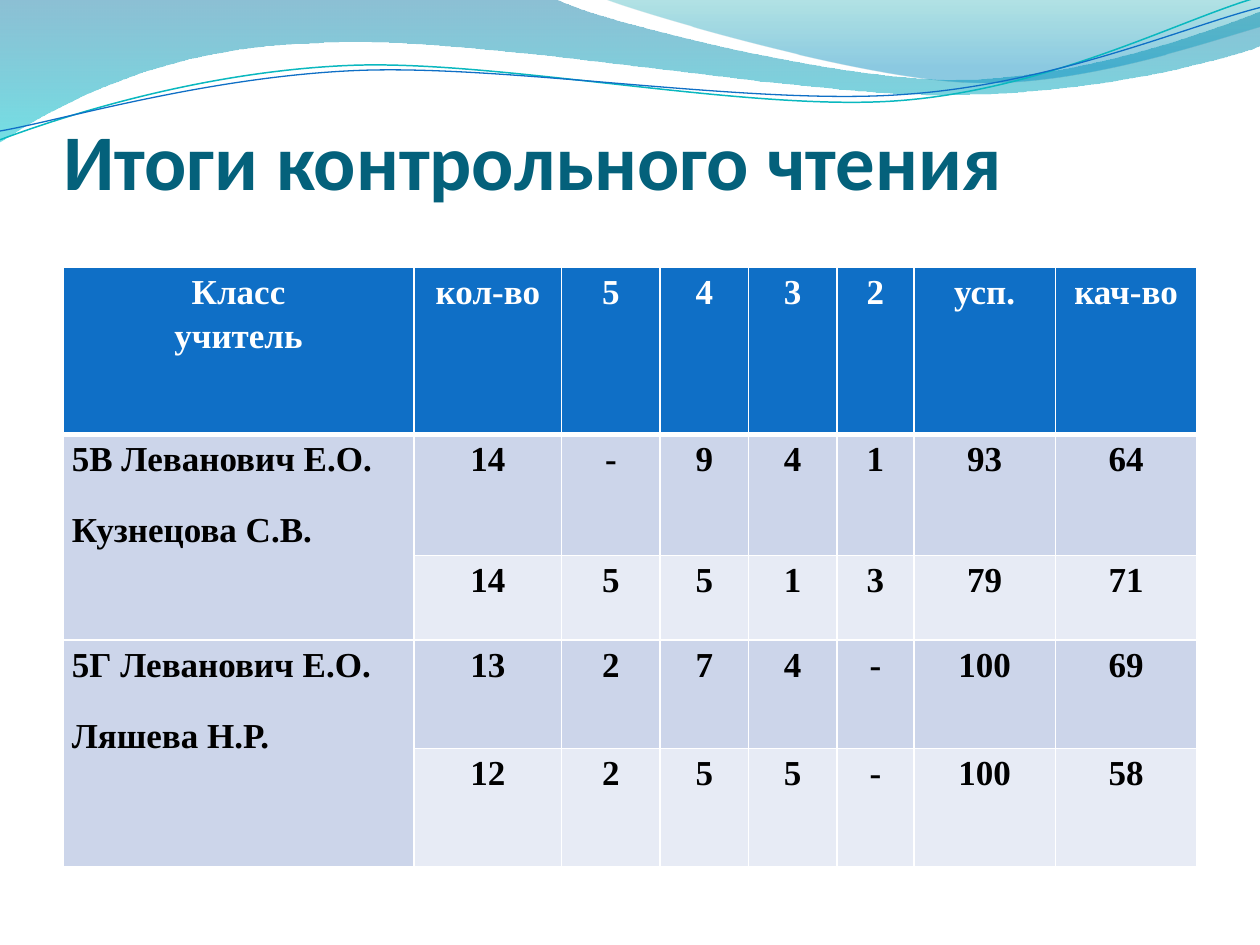
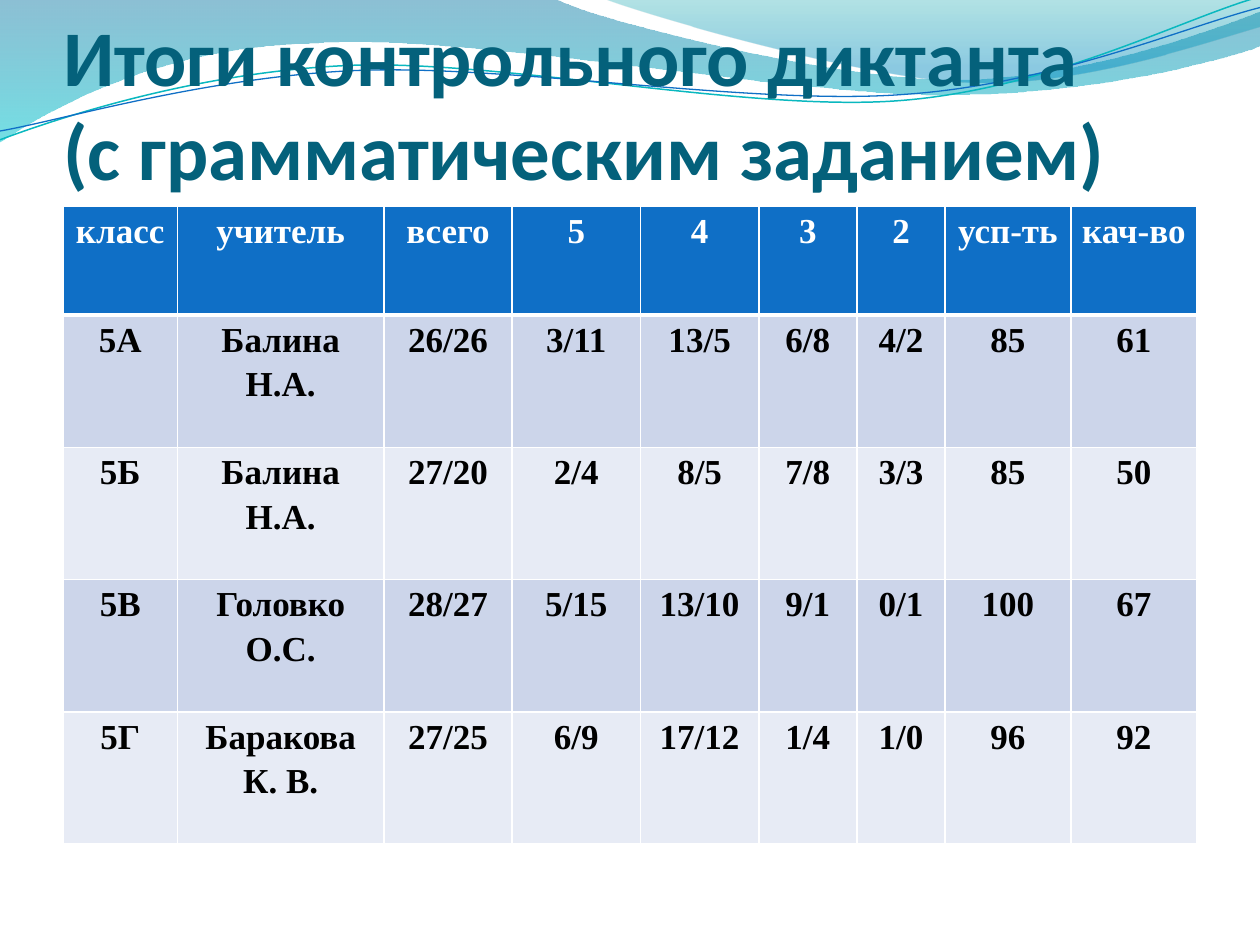
import pptx
import pptx.dml.color
import pptx.enum.text
import pptx.oxml.ns
import pptx.util
from lxml import etree

Inches = pptx.util.Inches
Pt = pptx.util.Pt
RGBColor = pptx.dml.color.RGBColor
Align = pptx.enum.text.PP_ALIGN
qn = pptx.oxml.ns.qn

WHITE = RGBColor(0xFF, 0xFF, 0xFF)
BLACK = RGBColor(0x00, 0x00, 0x00)
TITLE_TEAL = RGBColor(0x04, 0x61, 0x7B)
HEADER_BLUE = RGBColor(0x0F, 0x6F, 0xC6)
ROW_DARK = RGBColor(0xCC, 0xD5, 0xEA)
ROW_LIGHT = RGBColor(0xE7, 0xEB, 0xF5)
LINE_TEAL = RGBColor(0x0A, 0xB8, 0xBF)

CONTENT_LEFT = 0.5
CONTENT_WIDTH = 9

# Gradient stops: position, colour, opacity in percent
WIDE_STOPS = [(0, RGBColor(0x00, 0x74, 0xA1), 45), (1, RGBColor(0x00, 0xC6, 0xCF), 55)]
RIGHT_STOPS = [(0, RGBColor(0x00, 0xA1, 0xA9), 30), (0.8, RGBColor(0x00, 0x8B, 0xBF), 45)]

# Outlines: a pair is a straight step, six numbers are a Bezier step
WIDE_WAVE = [
    (0, 0), (4.4, -0.01), (4.76, 0.17, 6.64, 0.63, 7.58, 0.63),
    (8.53, 0.63, 9.58, 0.26, 10, 0.09), (10.01, 0.36),
    (9.83, 0.44, 8.7, 0.76, 7.46, 0.75), (6.22, 0.75, 3.82, 0.28, 2.57, 0.34),
    (1.29, 0.36, 0.46, 0.83, -0.01, 1.13), (0, 0),
]
RIGHT_WAVE = [
    (4.79, -0.01), (5.09, 0.11, 6.82, 0.62, 7.69, 0.65),
    (8.56, 0.69, 9.61, 0.32, 10, 0.21), (10, 0), (4.79, -0.01),
]
TEAL_CURVE = [
    (0, 1.11), (0.48, 0.93, 1.58, 0.57, 2.77, 0.52),
    (3.95, 0.47, 5.93, 0.89, 7.13, 0.8), (8.33, 0.71, 9.38, 0.15, 9.98, -0.02),
]
BLUE_CURVE = [
    (0, 1.04), (0.47, 0.96, 1.64, 0.61, 2.83, 0.56),
    (4.03, 0.51, 5.97, 0.84, 7.17, 0.75), (8.36, 0.67, 9.41, 0.21, 10, 0.06),
]

READING_ROWS = [
    ["Класс\nучитель", "кол-во", "5", "4", "3", "2", "усп.", "кач-во"],
    ["5В Леванович Е.О.\nКузнецова С.В.", "14", "-", "9", "4", "1", "93", "64"],
    [None, "14", "5", "5", "1", "3", "79", "71"],
    ["5Г Леванович Е.О.\nЛяшева Н.Р.", "13", "2", "7", "4", "-", "100", "69"],
    [None, "12", "2", "5", "5", "-", "100", "58"],
]
DICTATION_ROWS = [
    ["класс", "учитель", "всего", "5", "4", "3", "2", "усп-ть", "кач-во"],
    ["5А", "Балина Н.А.", "26/26", "3/11", "13/5", "6/8", "4/2", "85", "61"],
    ["5Б", "Балина Н.А.", "27/20", "2/4", "8/5", "7/8", "3/3", "85", "50"],
    ["5В", "Головко О.С.", "28/27", "5/15", "13/10", "9/1", "0/1", "100", "67"],
    ["5Г", "Баракова К. В.", "27/25", "6/9", "17/12", "1/4", "1/0", "96", "92"],
]


def write_text(frame, text, *, font, size, color, align, line_spacing=1.0, gap=0):
    """Fill a frame with bold text: newline starts a paragraph, \\v breaks a line."""
    for index, line in enumerate(text.split("\n")):
        para = frame.paragraphs[0] if index == 0 else frame.add_paragraph()
        para.text = line
        para.alignment = align
        para.line_spacing = line_spacing
        para.space_before = Pt(gap if index else 0)
        for span in para.runs:
            span.font.name = font
            span.font.size = Pt(size)
            span.font.bold = True
            span.font.color.rgb = color


def bend_steps(shape, outline):
    """Turn the straight steps that have control points into Bezier steps."""
    straight_steps = list(shape.element.spPr.iter(qn("a:lnTo")))
    for straight, step in zip(straight_steps, outline[1:]):
        if len(step) == 2:
            continue
        bend = etree.Element(qn("a:cubicBezTo"))
        for x, y in zip(step[::2], step[1::2]):
            etree.SubElement(bend, qn("a:pt"), x=str(Inches(x) - shape.left),
                             y=str(Inches(y) - shape.top))
        straight.getparent().replace(straight, bend)


def add_outline(page, outline, close):
    corners = [(Inches(step[-2]), Inches(step[-1])) for step in outline]
    builder = page.shapes.build_freeform(*corners[0])
    builder.add_line_segments(corners[1:], close=close)
    shape = builder.convert_to_shape()
    bend_steps(shape, outline)
    shape.shadow.inherit = False
    return shape


def add_wave(page, outline, stops):
    shape = add_outline(page, outline, close=True)
    shape.line.fill.background()
    shape.fill.gradient()
    shape.fill.gradient_angle = 270
    for stop, (position, color, _) in zip(shape.fill.gradient_stops, stops):
        stop.position = position
        stop.color.rgb = color
    colors = shape.element.spPr.iter(qn("a:srgbClr"))
    for element, (_, _, opacity) in zip(list(colors), stops):
        etree.SubElement(element, qn("a:alpha"), val=str(opacity * 1000))
    return shape


def add_curve(page, outline, color, width):
    shape = add_outline(page, outline, close=False)
    shape.fill.background()
    shape.line.color.rgb = color
    shape.line.width = Pt(width)
    return shape


def add_layout_waves(page):
    """Draw the waves and hand them to the layout, behind its placeholders."""
    waves = [
        add_wave(page, WIDE_WAVE, WIDE_STOPS),
        add_wave(page, RIGHT_WAVE, RIGHT_STOPS),
        add_curve(page, TEAL_CURVE, LINE_TEAL, 0.85),
        add_curve(page, BLUE_CURVE, HEADER_BLUE, 0.75),
    ]
    tree = page.slide_layout.shapes.element
    for index, wave in enumerate(waves):
        wave.element.nvSpPr.cNvPr.set("id", str(100 + index))
        tree.insert(2 + index, wave.element)


def set_title(page, text, top, height):
    title = page.shapes.title
    title.left, title.top = Inches(CONTENT_LEFT), Inches(top)
    title.width, title.height = Inches(CONTENT_WIDTH), Inches(height)
    frame = title.text_frame
    frame.word_wrap = True
    frame.auto_size = pptx.enum.text.MSO_AUTO_SIZE.NONE
    frame.vertical_anchor = pptx.enum.text.MSO_ANCHOR.BOTTOM
    frame.margin_left = frame.margin_right = frame.margin_bottom = 0
    frame.margin_top = Inches(0.05)
    write_text(frame, text, font="Calibri", size=45, color=TITLE_TEAL, align=Align.LEFT)


def set_borders(cell, top, bottom):
    properties = cell._tc.get_or_add_tcPr()
    for side, width in (("L", 1), ("R", 1), ("T", top), ("B", bottom)):
        line = etree.SubElement(properties, qn("a:ln" + side), w=str(Pt(width)))
        fill = etree.SubElement(line, qn("a:solidFill"))
        etree.SubElement(fill, qn("a:srgbClr"), val=str(WHITE))


def format_cell(cell, row):
    set_borders(cell, top=3 if row == 1 else 1, bottom=3 if row == 0 else 1)
    cell.fill.solid()
    cell.fill.fore_color.rgb = (
        HEADER_BLUE if row == 0 else ROW_DARK if row % 2 else ROW_LIGHT)
    cell.margin_left = cell.margin_right = Inches(0.07)
    cell.margin_top = cell.margin_bottom = 0


def add_results_table(page, rows, top, widths, heights):
    """Add a table with columns in proportion to widths; None joins a cell upwards."""
    table = page.shapes.add_table(
        len(rows), len(widths), Inches(CONTENT_LEFT), Inches(top),
        Inches(CONTENT_WIDTH), Inches(sum(heights))).table
    table.horz_banding = False
    for column, width in zip(table.columns, widths):
        column.width = Inches(CONTENT_WIDTH * width / sum(widths))
    for line, height in zip(table.rows, heights):
        line.height = Inches(height)
    for row, texts in enumerate(rows):
        for column, text in enumerate(texts):
            cell = table.cell(row, column)
            format_cell(cell, row)
            if text is None:
                table.cell(row - 1, column).merge(cell)
                continue
            is_names = row > 0 and "\n" in text
            write_text(
                cell.text_frame, text, font="Times New Roman", size=20,
                color=BLACK if row else WHITE, line_spacing=1.15,
                align=Align.LEFT if is_names else Align.CENTER,
                gap=15 if is_names else 0)


def main():
    deck = pptx.Presentation()
    deck.slide_width, deck.slide_height = Inches(10), Inches(7.5)
    title_only = deck.slide_layouts[5]

    reading = deck.slides.add_slide(title_only)
    add_layout_waves(reading)
    set_title(reading, "Итоги контрольного чтения", top=0.77, height=0.87)
    add_results_table(
        reading, READING_ROWS, top=2.12,
        widths=[2.78, 1.17, 0.78, 0.7, 0.7, 0.61, 1.12, 1.12],
        heights=[1.33, 0.96, 0.67, 0.86, 0.94])

    dictation = deck.slides.add_slide(title_only)
    set_title(dictation, "Итоги контрольного диктанта\v(с грамматическим заданием)",
              top=0.31, height=1.25)
    add_results_table(
        dictation, DICTATION_ROWS, top=1.64,
        widths=[0.91, 1.64, 1.02, 1.02, 0.94, 0.78, 0.7, 1, 1],
        heights=[0.86] + [1.05] * 4)

    deck.save("out.pptx")


if __name__ == "__main__":
    main()
